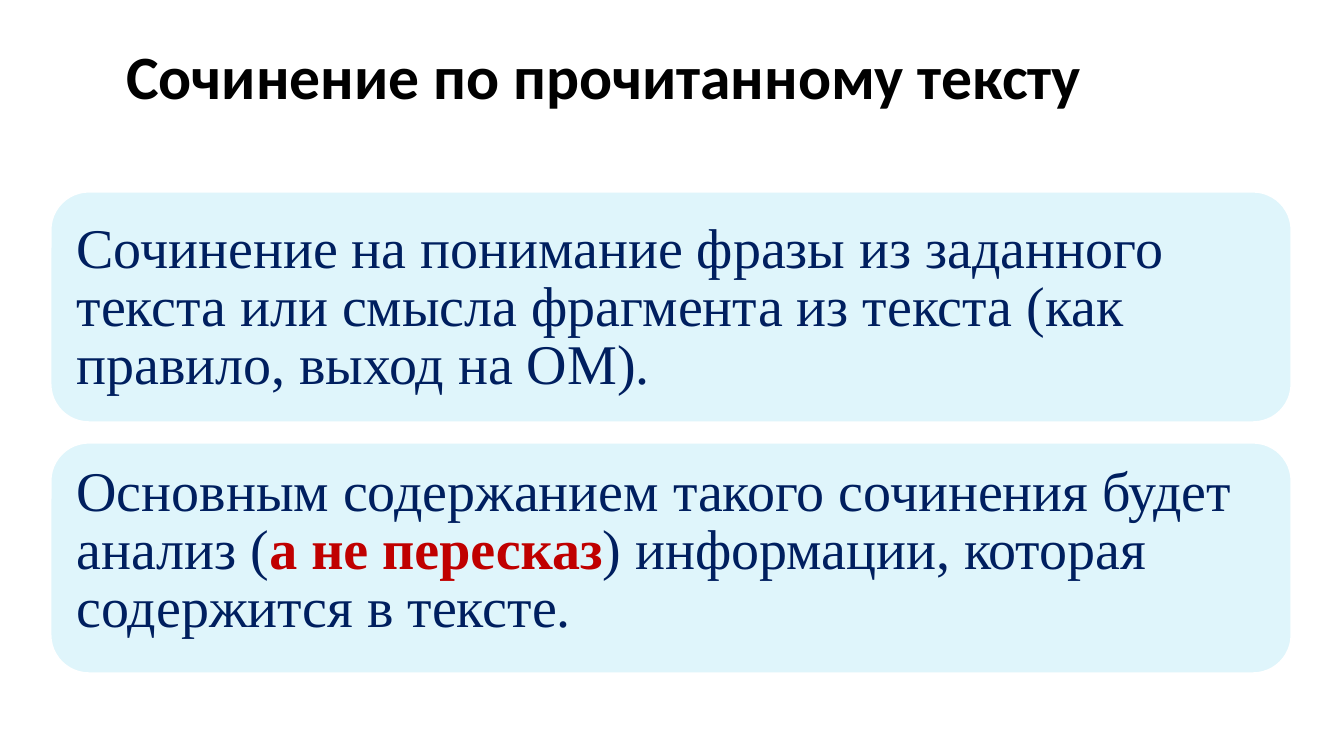
from pptx import Presentation
from pptx.dml.color import RGBColor
from pptx.enum.shapes import MSO_SHAPE
from pptx.enum.text import MSO_ANCHOR, MSO_AUTO_SIZE, PP_ALIGN
from pptx.util import Inches, Pt

ROUNDED = MSO_SHAPE.ROUNDED_RECTANGLE
LEFT = PP_ALIGN.LEFT
TOP, MIDDLE = MSO_ANCHOR.TOP, MSO_ANCHOR.MIDDLE
NO_FIT = MSO_AUTO_SIZE.NONE
BLACK = RGBColor(0x00, 0x00, 0x00)
WHITE = RGBColor(0xFF, 0xFF, 0xFF)
PALE_BLUE = RGBColor(0xDF, 0xF5, 0xFB)
NAVY = RGBColor(0x00, 0x1F, 0x5F)
RED = RGBColor(0xC0, 0x00, 0x00)

TITLE = "Сочинение по прочитанному тексту"
STATEMENTS = [
    [("Сочинение на понимание фразы из заданного текста или смысла "
      "фрагмента из текста (как правило, выход на ОМ).", False)],
    [("Основным содержанием такого сочинения будет анализ (", False),
     ("а не пересказ", True),
     (") информации, которая содержится в тексте.", False)],
]
PANEL_TOP, PANEL_PITCH = 1.9, 2.49


class EssaySlide:
    """Holds the slide with its text style and draws its elements."""

    title_font, body_font = "Calibri", "Times New Roman"
    title_size, body_size = Pt(44), Pt(40)
    line_height, statement_gap = Pt(41.4), Pt(49.3)

    def __init__(self, deck):
        self.slide = deck.slides.add_slide(deck.slide_layouts[5])

    def format_span(self, span, font, size, color, bold):
        span.font.name = font
        span.font.size = size
        span.font.bold = bold
        span.font.color.rgb = color

    def set_frame(self, frame, inset_top, anchor):
        frame.word_wrap = True
        frame.auto_size = NO_FIT
        frame.vertical_anchor = anchor
        frame.margin_left = frame.margin_right = frame.margin_bottom = 0
        frame.margin_top = Inches(inset_top)

    def title(self, text, left, top, width, height):
        box = self.slide.shapes.title
        box.left, box.top = Inches(left), Inches(top)
        box.width, box.height = Inches(width), Inches(height)
        self.set_frame(box.text_frame, 0.01, MIDDLE)
        box.text_frame.text = text
        para = box.text_frame.paragraphs[0]
        para.alignment = LEFT
        self.format_span(para.runs[0], self.title_font, self.title_size, BLACK, True)

    def panel(self, left, top, width, height):
        panel = self.slide.shapes.add_shape(
            ROUNDED, Inches(left), Inches(top), Inches(width), Inches(height))
        panel.shadow.inherit = False
        panel.fill.solid()
        panel.fill.fore_color.rgb = PALE_BLUE
        panel.line.color.rgb = WHITE
        panel.line.width = Pt(1.56)

    def statements(self, statements, left, top, width, height):
        box = self.slide.shapes.add_textbox(
            Inches(left), Inches(top), Inches(width), Inches(height))
        frame = box.text_frame
        self.set_frame(frame, 0.14, TOP)
        for index, parts in enumerate(statements):
            para = frame.add_paragraph() if index else frame.paragraphs[0]
            para.alignment = LEFT
            para.line_spacing = self.line_height
            para.space_before = self.statement_gap if index else Pt(0)
            for text, stressed in parts:
                span = para.add_run()
                span.text = text
                color = RED if stressed else NAVY
                self.format_span(span, self.body_font, self.body_size, color, stressed)


def main():
    deck = Presentation()
    deck.slide_width, deck.slide_height = Inches(13.33), Inches(7.5)
    page = EssaySlide(deck)
    page.title(TITLE, 1.25, 0.36, 10.37, 0.76)
    for index in range(len(STATEMENTS)):
        page.panel(0.5, PANEL_TOP + index * PANEL_PITCH, 12.31, 2.29)
    page.statements(STATEMENTS, 0.76, 2.06, 11.52, 4.26)
    deck.save("out.pptx")


if __name__ == "__main__":
    main()
